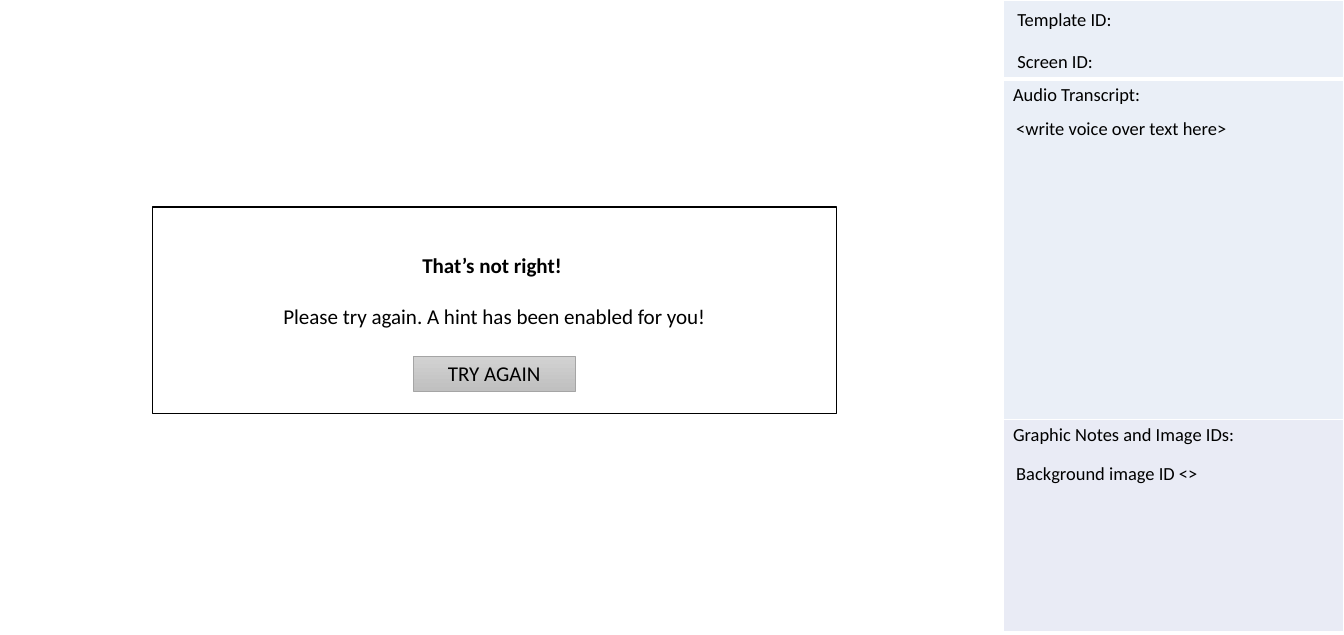
"""Build a storyboard slide with a try-again feedback dialog and a notes panel."""
import pptx
import pptx.dml.color
import pptx.enum.shapes
import pptx.enum.text
import pptx.oxml
import pptx.util
import lxml.etree

Cm = pptx.util.Cm
Pt = pptx.util.Pt
RGB = pptx.dml.color.RGBColor.from_string
ALIGN = pptx.enum.text.PP_ALIGN
ANCHOR = pptx.enum.text.MSO_ANCHOR

THEME = {
    "font": "Calibri", "text": "000000", "white": "FFFFFF",
    "panel": "EAEFF7", "panel_last": "E9EBF5",
    "button_top": "D2D2D2", "button_bottom": "C0C0C0", "button_line": "A5A5A5",
    "note_size": 14, "dialog_size": 16,
}
SLIDE_SIZE = (36, 17)
PANEL = (26.88, 0, 9.12)
PANEL_ROWS = [
    ("", 2.11, THEME["panel"], 3),
    ("Audio Transcript:", 9.12, THEME["panel"], 1),
    ("Graphic Notes and Image IDs:", 5.67, THEME["panel_last"], 1),
]
NOTES = [
    ("Screen ID:", 27, 1.22),
    ("Template ID:", 27, 0.1),
    ("<write voice over text here>", 26.97, 3.02),
    ("Background image ID <>", 26.97, 12.24),
]
NOTE_SIZE = (9, 0.86)
DIALOG_BOX = (4.09, 5.54, 18.31, 5.54)
DIALOG_TEXT = [("That’s not right! ", True, 0), ("Please try again. A hint has been enabled for you!", False, 19.5)]
BUTTON_BOX = (11.07, 9.53, 4.34, 0.94)
BUTTON_TEXT = [("TRY AGAIN", False, 0)]


def apply(target, values):
    for name, value in values.items():
        setattr(target, name, value)


def write(frame, lines, size, alignment=ALIGN.LEFT, **frame_format):
    apply(frame, {"word_wrap": True, **frame_format})
    for index, (text, bold, space) in enumerate(lines):
        paragraph = frame.add_paragraph() if index else frame.paragraphs[0]
        apply(paragraph, {"alignment": alignment, "space_before": Pt(space)})
        run = paragraph.add_run()
        run.text = text
        apply(run.font, {"name": THEME["font"], "size": Pt(size), "bold": bold})
        run.font.color.rgb = RGB(THEME["text"])


def set_borders(cell, widths):
    properties = cell._tc.get_or_add_tcPr()
    for index, (side, width) in enumerate(widths.items()):
        border = pptx.oxml.parse_xml(
            f'<a:{side} xmlns:a="http://schemas.openxmlformats.org/drawingml/2006/main" w="{Pt(width)}">'
            f'<a:solidFill><a:srgbClr val="{THEME["white"]}"/></a:solidFill></a:{side}>')
        properties.insert(index, border)


def add_panel(slide):
    left, top, width = PANEL
    height = sum(row[1] for row in PANEL_ROWS)
    table = slide.shapes.add_table(len(PANEL_ROWS), 1, Cm(left), Cm(top), Cm(width), Cm(height)).table
    apply(table, {"first_row": False, "horz_banding": False})
    top_border = 1
    for index, (text, row_height, color, bottom_border) in enumerate(PANEL_ROWS):
        table.rows[index].height = Cm(row_height)
        cell = table.cell(index, 0)
        cell.fill.solid()
        cell.fill.fore_color.rgb = RGB(color)
        set_borders(cell, {"lnL": 1, "lnR": 1, "lnT": top_border, "lnB": bottom_border})
        top_border = bottom_border
        if text:
            write(cell.text_frame, [(text, False, 0)], THEME["note_size"])


def add_box(slide, box, line_color, line_width):
    shape = slide.shapes.add_shape(pptx.enum.shapes.MSO_SHAPE.RECTANGLE, *map(Cm, box))
    shape.shadow.inherit = False
    shape.line.color.rgb = RGB(line_color)
    shape.line.width = Pt(line_width)
    return shape


def add_dialog(slide):
    dialog = add_box(slide, DIALOG_BOX, THEME["text"], 1)
    dialog.fill.solid()
    dialog.fill.fore_color.rgb = RGB(THEME["white"])
    write(dialog.text_frame, DIALOG_TEXT, THEME["dialog_size"], ALIGN.CENTER,
          vertical_anchor=ANCHOR.TOP, margin_top=Cm(1.22),
          margin_left=Cm(0.53), margin_right=Cm(0.53), margin_bottom=Cm(0.53))

    button = add_box(slide, BUTTON_BOX, THEME["button_line"], 0.5)
    button.fill.gradient()
    button.fill.gradient_angle = 270
    for stop, name in zip(button.fill.gradient_stops, ("button_top", "button_bottom")):
        stop.color.rgb = RGB(THEME[name])
    write(button.text_frame, BUTTON_TEXT, THEME["dialog_size"], ALIGN.CENTER,
          vertical_anchor=ANCHOR.MIDDLE, margin_left=0, margin_right=0)


def main():
    presentation = pptx.Presentation()
    width, height = map(Cm, SLIDE_SIZE)
    apply(presentation, {"slide_width": width, "slide_height": height})
    slide = presentation.slides.add_slide(presentation.slide_layouts[6])
    add_panel(slide)
    for text, left, top in NOTES:
        note = slide.shapes.add_textbox(Cm(left), Cm(top), *map(Cm, NOTE_SIZE))
        write(note.text_frame, [(text, False, 0)], THEME["note_size"])
    add_dialog(slide)
    presentation.save("out.pptx")


if __name__ == "__main__":
    main()
